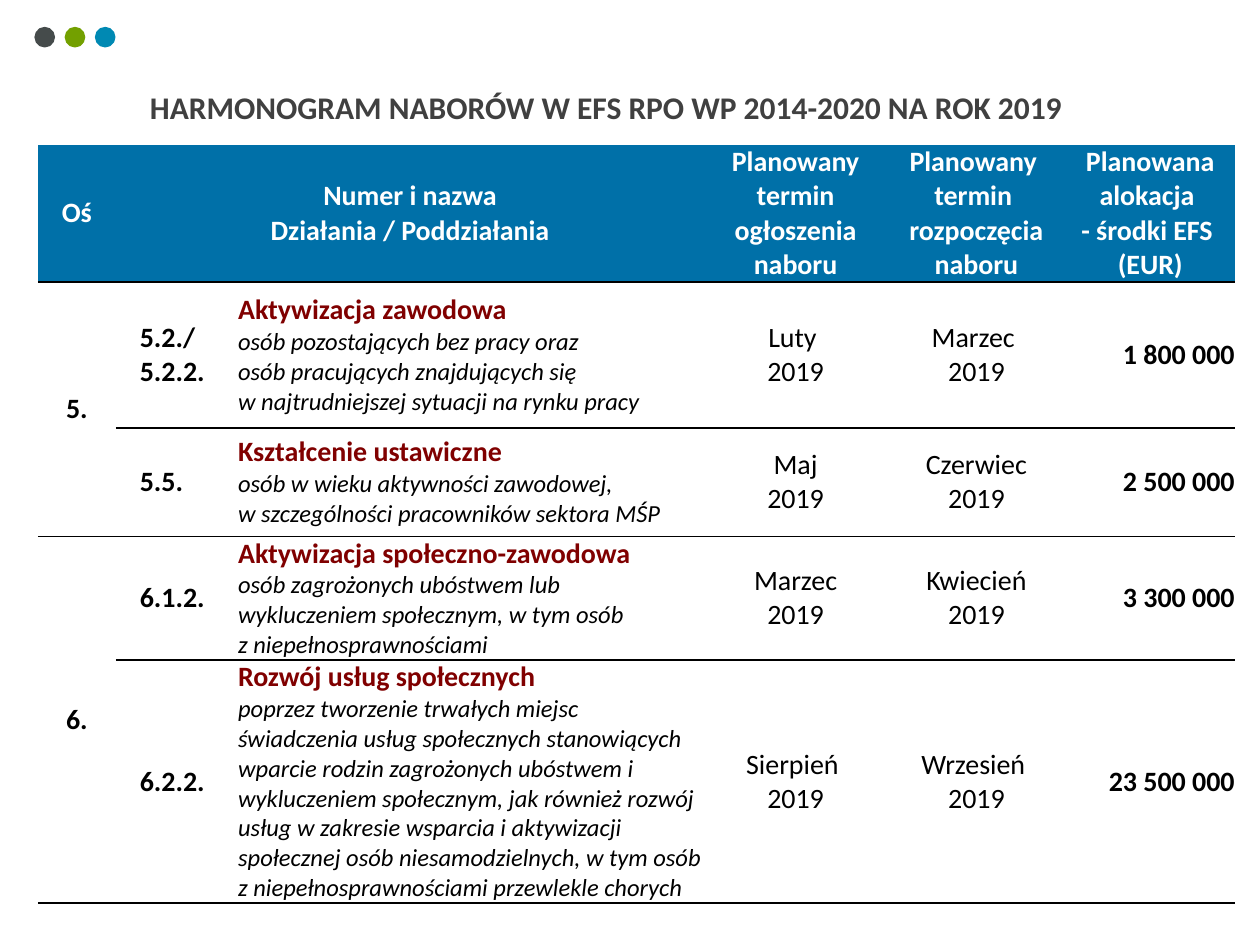
from lxml import etree
from pptx import Presentation
from pptx import util as u
from pptx.dml.color import RGBColor
from pptx.enum import shapes, text
from pptx.oxml.ns import qn

COLORS = {"blue": "0070A8", "maroon": "800000", "black": "000000", "white": "FFFFFF",
          "title": "404040", "dot_gray": "454B4B", "dot_green": "73A000", "dot_blue": "0089B3"}
COLUMNS = [0.62, 0.78, 3.89, 1.45, 1.42, 1.34]
ROWS = [1.08, 1.16, 0.86, 0.97, 1.9]
HEADER = [["Oś"], ["Numer i nazwa", "Działania / Poddziałania"], [],
          ["Planowany termin ogłoszenia naboru"],
          ["Planowany ", "termin ", "rozpoczęcia", "naboru"],
          ["Planowana alokacja ", "- środki EFS ", "(EUR)"]]
# axis, number, name, description, announced, starts, allocation
CALLS = [
    (["5."], ["5.2./", "5.2.2."], "Aktywizacja zawodowa",
     ["osób pozostających bez pracy oraz", "osób pracujących znajdujących się",
      "w najtrudniejszej sytuacji na rynku pracy"], "Luty ", "Marzec ", "1 800 000"),
    ([], ["5.5."], "Kształcenie ustawiczne",
     ["osób w wieku aktywności zawodowej,", "w szczególności pracowników sektora MŚP"],
     "Maj", "Czerwiec", "2 500 000"),
    (["6."], ["6.1.2."], "Aktywizacja społeczno-zawodowa",
     ["osób zagrożonych ubóstwem lub wykluczeniem społecznym, w tym osób \v"
      "z niepełnosprawnościami"], "Marzec", "Kwiecień", "3 300 000"),
    ([], ["6.2.2."], "Rozwój usług społecznych",
     ["poprzez tworzenie trwałych miejsc świadczenia usług społecznych stanowiących "
      "wparcie rodzin zagrożonych ubóstwem i wykluczeniem społecznym, jak również rozwój "
      "usług w zakresie wsparcia i aktywizacji społecznej osób niesamodzielnych, w tym osób "
      "z niepełnosprawnościami przewlekle chorych"], "Sierpień ", "Wrzesień ", "23 500 000"),
]
BOLD = {"size": u.Pt(16), "bold": True}
PLAIN = {"size": u.Pt(16), "bold": False}
DETAIL = {"size": u.Pt(14), "bold": False, "italic": True}


class SlideBuilder:
    font = "Calibri"

    def __init__(self, page):
        self.page = page

    def color(self, name):
        return RGBColor.from_string(COLORS[name])

    def dot(self, left, color):
        dot = self.page.shapes.add_shape(shapes.MSO_SHAPE.OVAL, u.Inches(left), u.Inches(0.22),
                                         u.Inches(0.15), u.Inches(0.15))
        dot.shadow.inherit = False
        dot.fill.solid()
        dot.fill.fore_color.rgb = dot.line.color.rgb = self.color(color)
        dot.line.width = u.Pt(1)

    def paragraphs(self, frame, lines, align, indent=0):
        """Fill a frame from (wording, font values, colour) lines."""
        for index, (wording, values, color) in enumerate(lines):
            para = frame.paragraphs[0] if index == 0 else frame.add_paragraph()
            para.text = wording
            para.alignment = align
            if indent:
                para._p.get_or_add_pPr().set("marL", str(u.Inches(indent)))
            for span in para.runs:
                span.font.name = self.font
                span.font.color.rgb = self.color(color)
                for key, value in values.items():
                    setattr(span.font, key, value)

    def title(self, wording):
        box = self.page.shapes.add_textbox(u.Inches(1.05), u.Inches(0.65),
                                           u.Inches(7.58), u.Inches(0.4))
        box.text_frame.word_wrap = False
        values = {"size": u.Pt(18), "bold": True}
        self.paragraphs(box.text_frame, [(wording, values, "title")], text.PP_ALIGN.CENTER)

    def table(self):
        frame = self.page.shapes.add_table(len(ROWS), len(COLUMNS), u.Inches(0.3), u.Inches(1.15),
                                           u.Inches(sum(COLUMNS)), u.Inches(sum(ROWS)))
        table = frame.table
        table.first_row = table.horz_banding = False
        for column, width in zip(table.columns, COLUMNS):
            column.width = u.Inches(width)
        for row, height in zip(table.rows, ROWS):
            row.height = u.Inches(height)
        for first, last in (((0, 1), (0, 2)), ((1, 0), (2, 0)), ((3, 0), (4, 0))):
            table.cell(*first).merge(table.cell(*last))
        return table

    def borders(self, cell, drawn):
        for side in ("lnL", "lnR", "lnT", "lnB"):
            line = etree.SubElement(cell._tc.get_or_add_tcPr(), qn(f"a:{side}"), w=str(u.Pt(1)))
            if side in drawn:
                fill = etree.SubElement(line, qn("a:solidFill"))
                etree.SubElement(fill, qn("a:srgbClr"), val=COLORS["black"])
            else:
                etree.SubElement(line, qn("a:noFill"))

    def cell(self, cell, lines, align, indent=0, fill=None, drawn=("lnT", "lnB")):
        margins = dict.fromkeys(("margin_left", "margin_right", "margin_top", "margin_bottom"), 0)
        for key, value in {**margins, "vertical_anchor": text.MSO_ANCHOR.MIDDLE}.items():
            setattr(cell, key, value)
        self.borders(cell, drawn)
        if fill:
            cell.fill.solid()
            cell.fill.fore_color.rgb = self.color(fill)
        else:
            cell.fill.background()
        self.paragraphs(cell.text_frame, lines, align, indent)


def styled(lines, values, color="black"):
    return [(line, values, color) for line in lines]


def main():
    deck = Presentation()
    deck.slide_width, deck.slide_height = u.Inches(10), u.Inches(7.5)
    builder = SlideBuilder(deck.slides.add_slide(deck.slide_layouts[6]))

    for index, color in enumerate(("dot_gray", "dot_green", "dot_blue")):
        builder.dot(0.28 + 0.24 * index, color)

    table = builder.table()
    center, left, right = text.PP_ALIGN.CENTER, text.PP_ALIGN.LEFT, text.PP_ALIGN.RIGHT
    for column, lines in enumerate(HEADER):
        builder.cell(table.cell(0, column), styled(lines, BOLD, "white"), center,
                     fill="blue", drawn=("lnB",))
    for row, (axis, number, name, detail, announced, starts, amount) in enumerate(CALLS, 1):
        contents = [
            (styled(axis, BOLD), center),
            (styled(number, BOLD), left, 0.19),
            (styled([name], BOLD, "maroon") + styled(detail, DETAIL), left, 0.19),
            (styled([announced, "2019"], PLAIN), center),
            (styled([starts, "2019"], PLAIN), center),
            (styled([amount], BOLD), right),
        ]
        for column, content in enumerate(contents):
            builder.cell(table.cell(row, column), *content)

    builder.title("HARMONOGRAM NABORÓW W EFS RPO WP 2014-2020 NA ROK 2019 ")
    deck.save("out.pptx")


if __name__ == "__main__":
    main()
